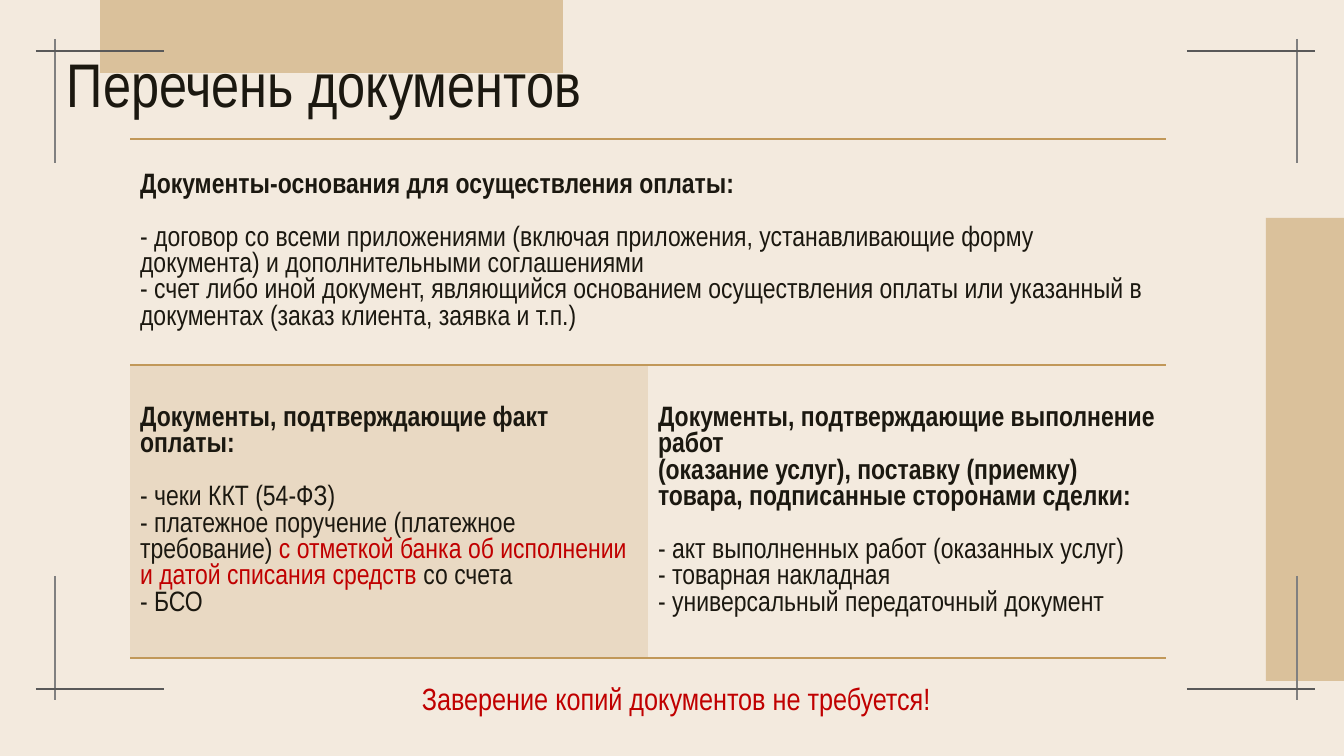
import itertools

import pptx
import pptx.dml.color
import pptx.enum.shapes
import pptx.enum.text
import pptx.oxml
import pptx.oxml.ns
import pptx.util

WIDTH, HEIGHT = 1344, 756
PX = 12192000 / WIDTH
FONT = "Arial Narrow"
COLORS = {
    "background": "F3EADE",
    "sand": "DAC19B",
    "gold": "C19859",
    "text": "1B1810",
    "red": "C00000",
    "mark_vertical": "808080",
    "mark_horizontal": "595959",
}

BASIS = (
    ["Документы-основания для осуществления оплаты:"],
    [
        "- договор со всеми приложениями (включая приложения, устанавливающие форму "
        "документа) и дополнительными соглашениями",
        "- счет либо иной документ, являющийся основанием осуществления оплаты или "
        "указанный в документах (заказ клиента, заявка и т.п.)",
    ],
)
PAYMENT = (
    ["Документы, подтверждающие факт оплаты:"],
    [
        "- чеки ККТ (54-ФЗ)",
        "- платежное поручение (платежное требование) "
        "|с отметкой банка об исполнении и датой списания средств |со счета",
        "- БСО",
    ],
)
DELIVERY = (
    [
        "Документы, подтверждающие выполнение работ",
        "(оказание услуг), поставку (приемку) товара, подписанные сторонами сделки:",
    ],
    [
        "- акт выполненных работ (оказанных услуг)",
        "- товарная накладная",
        "- универсальный передаточный документ",
    ],
)


def emu(*lengths):
    return [pptx.util.Emu(round(length * PX)) for length in lengths]


def rgb(name):
    return pptx.dml.color.RGBColor.from_string(COLORS[name])


def format_run(run, size, color="text", bold=False):
    run.font.name = FONT
    run.font.size = pptx.util.Pt(size)
    run.font.bold = bold
    run.font.color.rgb = rgb(color)


def add_band(slide, box):
    band = slide.shapes.add_shape(pptx.enum.shapes.MSO_SHAPE.RECTANGLE, *emu(*box))
    band.shadow.inherit = False
    band.fill.solid()
    band.fill.fore_color.rgb = rgb("sand")
    band.line.fill.background()


def add_mark(slide, start, end, color):
    mark = slide.shapes.add_connector(
        pptx.enum.shapes.MSO_CONNECTOR.STRAIGHT, *emu(*start, *end)
    )
    mark.line.width = pptx.util.Pt(1)
    mark.line.color.rgb = rgb(color)
    properties = mark.element.spPr
    properties.append(pptx.oxml.parse_xml(f'<a:effectLst {pptx.oxml.ns.nsdecls("a")}/>'))


def add_corner_marks(slide, box):
    """Crossed lines in each corner of the box, reaching a little past it."""
    left, top, width, height = box
    for right_side, bottom_side in itertools.product((0, 1), repeat=2):
        x = left + right_side * width
        y = top + bottom_side * height
        near_x, far_x = (x - 110, x + 18) if right_side else (x - 19, x + 109)
        near_y, far_y = (y - 113, y + 11) if bottom_side else (y - 12, y + 112)
        add_mark(slide, (x, near_y), (x, far_y), "mark_vertical")
        add_mark(slide, (near_x, y), (far_x, y), "mark_horizontal")


def add_label(slide, box, text, size, color="text", wrap=True):
    frame = slide.shapes.add_textbox(*emu(*box)).text_frame
    frame.word_wrap = wrap
    frame.text = text
    format_run(frame.paragraphs[0].runs[0], size, color)
    return frame


def add_title(slide, box):
    frame = add_label(slide, box, "Перечень документов", 44)
    frame.vertical_anchor = pptx.enum.text.MSO_ANCHOR.MIDDLE
    frame.paragraphs[0].line_spacing = 0.9


def set_borders(cell, sides):
    """Gold lines on the given sides, none on the others."""
    properties = cell._tc.get_or_add_tcPr()
    for position, side in enumerate("LRTB"):
        if side in sides:
            fill = f'<a:solidFill><a:srgbClr val="{COLORS["gold"]}"/></a:solidFill>'
        else:
            fill = "<a:noFill/>"
        border = f'<a:ln{side} {pptx.oxml.ns.nsdecls("a")} w="12700">{fill}</a:ln{side}>'
        properties.insert(position, pptx.oxml.parse_xml(border))


def fill_cell(cell, content, tinted=False):
    """Bold heading, a gap, then the list; text between bars is red."""
    heading, items = content
    lines = heading + items
    cell.vertical_anchor = pptx.enum.text.MSO_ANCHOR.MIDDLE
    frame = cell.text_frame
    frame.text = "\n".join(lines)
    for index, (paragraph, line) in enumerate(zip(frame.paragraphs, lines)):
        parts = line.split("|")
        paragraph.text = parts[0]
        for part in parts[1:]:
            paragraph.add_run().text = part
        for run, color in zip(paragraph.runs, itertools.cycle(("text", "red"))):
            format_run(run, 20, color, bold=index < len(heading))
    frame.paragraphs[len(heading)].space_before = pptx.util.Pt(19)
    cell.fill.solid()
    cell.fill.fore_color.rgb = rgb("gold" if tinted else "background")
    if tinted:
        color = cell._tc.tcPr.find(".//" + pptx.oxml.ns.qn("a:srgbClr"))
        alpha = f'<a:alpha {pptx.oxml.ns.nsdecls("a")} val="20000"/>'
        color.append(pptx.oxml.parse_xml(alpha))


def add_documents_table(slide, box):
    table = slide.shapes.add_table(2, 2, *emu(*box)).table
    table.first_row = table.horz_banding = False
    for column in table.columns:
        column.width = emu(box[2] / 2)[0]
    for row, height in zip(table.rows, (226, box[3] - 226)):
        row.height = emu(height)[0]
    table.cell(0, 0).merge(table.cell(0, 1))
    fill_cell(table.cell(0, 0), BASIS)
    fill_cell(table.cell(1, 0), PAYMENT, tinted=True)
    fill_cell(table.cell(1, 1), DELIVERY)
    for row, column in itertools.product(range(2), repeat=2):
        set_borders(table.cell(row, column), "TB")


def build_documents_slide(presentation):
    slide = presentation.slides.add_slide(presentation.slide_layouts[6])
    slide.background.fill.solid()
    slide.background.fill.fore_color.rgb = rgb("background")
    add_band(slide, (1266, 218, 100, 463))
    add_band(slide, (100, -27, 463, 100))
    add_corner_marks(slide, (55, 51, 1242, 638))
    add_title(slide, (57, 43, 1159, 89))
    add_documents_table(slide, (130, 139, 1036, 519))
    add_label(slide, (412, 675, 530, 47), "Заверение копий документов не требуется!",
              22, "red", wrap=False)


def main():
    presentation = pptx.Presentation()
    presentation.slide_width, presentation.slide_height = emu(WIDTH, HEIGHT)
    build_documents_slide(presentation)
    presentation.save("out.pptx")


if __name__ == "__main__":
    main()
